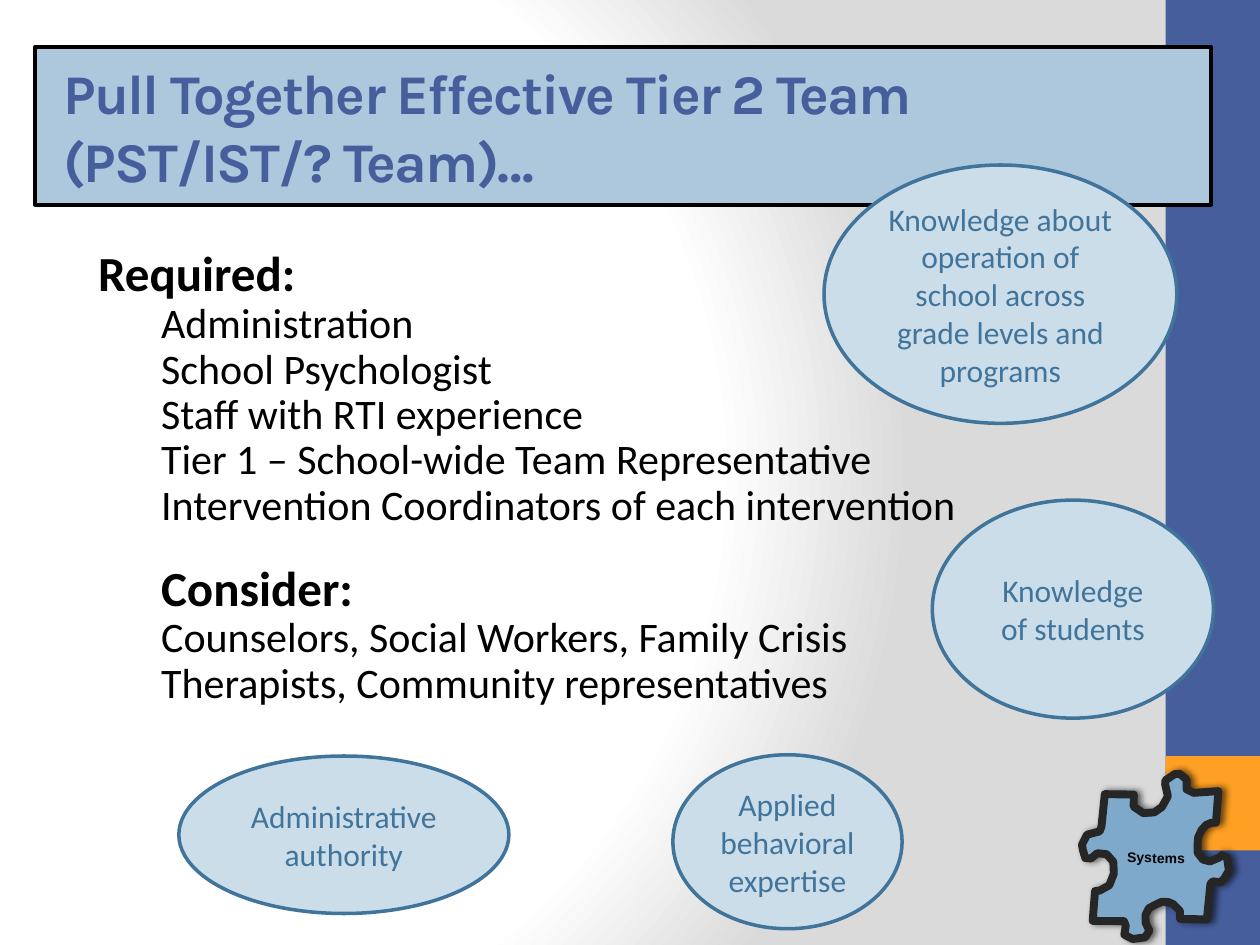
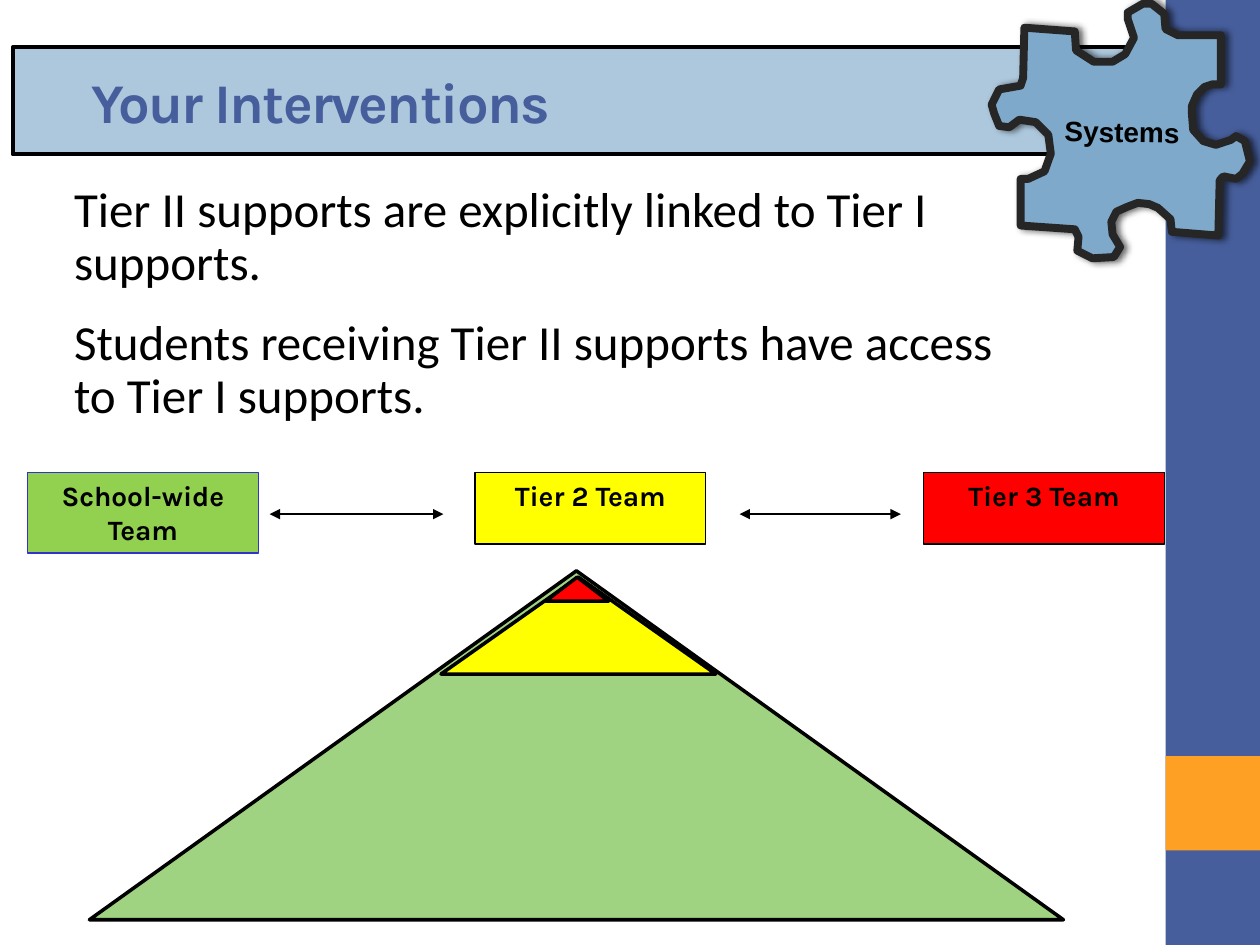
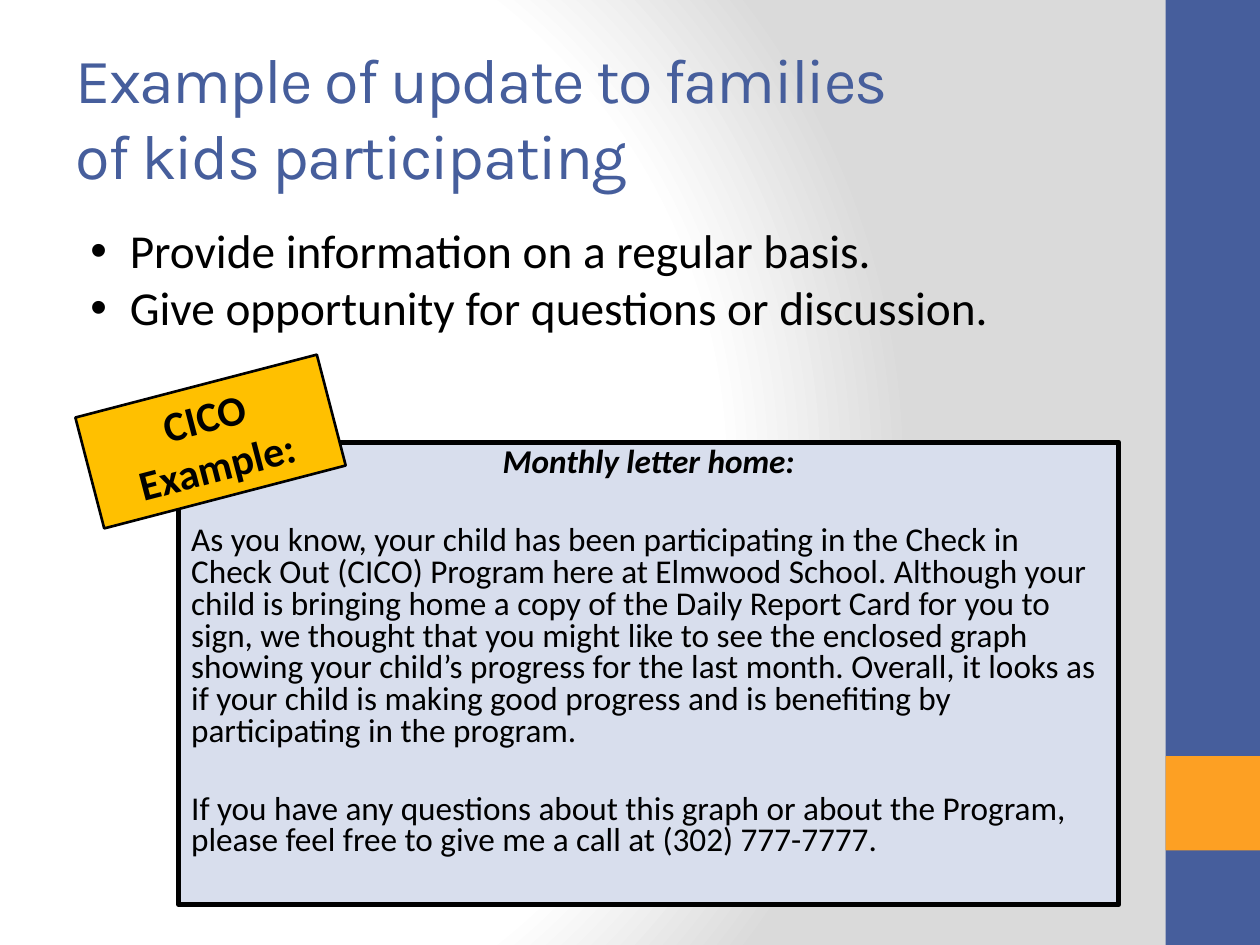
from lxml.etree import SubElement as Sub
from pptx import Presentation as Deck
from pptx.dml.color import RGBColor as RGB
from pptx.enum.shapes import MSO_CONNECTOR as Link, MSO_SHAPE as Form
from pptx.enum.text import MSO_ANCHOR as Anchor, PP_ALIGN as Align
from pptx.oxml.ns import qn
from pptx.util import Pt

HUES = {
    "band": "465E9C", "accent": "FDA023", "banner": "ADC8DD", "piece": "7EA9CA",
    "edge": "262626", "oval": "CCDDEA", "ring": "40749B", "letter": "D8DEED",
    "black": "000000", "white": "FFFFFF", "gray": "DADADA", "base": "A0D381",
    "green": "92D050", "blue": "3333CC", "yellow": "FFFF00", "red": "FF0000",
    "tag": "FFC000",
}

PIECE = [
    (969, 28), (969, 67), (962, 67), (956, 69), (950, 75), (946, 84), (946, 91),
    (947, 103), (955, 112), (965, 115), (977, 111), (981, 108), (988, 112),
    (992, 128), (986, 138), (981, 142), (971, 140), (968, 143), (967, 183),
    (967, 187), (930, 184), (929, 174), (919, 165), (912, 162), (903, 161),
    (895, 164), (886, 168), (882, 176), (883, 186), (889, 196), (884, 204),
    (867, 205), (855, 199), (856, 188), (853, 182), (810, 179), (810, 142),
    (816, 142), (829, 136), (834, 122), (832, 107), (822, 97), (809, 95),
    (801, 101), (793, 100), (789, 90), (787, 83), (793, 71), (810, 68),
    (812, 62), (813, 22), (853, 25), (854, 40), (868, 49), (883, 49), (893, 43),
    (900, 30), (895, 15), (895, 10), (907, 3), (914, 3), (924, 11), (925, 23),
    (935, 28),
]


def tint(name):
    return RGB.from_string(HUES[name])


def node(parent, tag, **attrs):
    return Sub(parent, qn(tag), {key: str(val) for key, val in attrs.items()})


def shade(page):
    fill = page.background.fill
    fill.solid()
    old = page._element.find(".//" + qn("p:bgPr")).find(qn("a:solidFill"))
    grad = node(old.getparent(), "a:gradFill", rotWithShape=1)
    old.getparent().replace(old, grad)
    stops = node(grad, "a:gsLst")
    for pos, name in ((0, "white"), (75, "white"), (100, "gray")):
        node(node(stops, "a:gs", pos=pos * 1000), "a:srgbClr", val=HUES[name])
    ramp = node(grad, "a:path", path="circle")
    node(ramp, "a:fillToRect", l=20000, t=50000, r=100000, b=50000)


def write(frame, text, size=18, font="Calibri", hue="black", bold=False, slant=False,
          align=Align.LEFT, lines=1, before=0, indent=0, hang=0, bullet=None, track=0):
    para = frame.add_paragraph() if frame.text else frame.paragraphs[0]
    para.text = text
    para.alignment, para.line_spacing, para.space_before = align, lines, Pt(before)
    props = para._p.get_or_add_pPr()
    props.set("marL", str(Pt(indent)))
    props.set("indent", str(Pt(-hang)))
    if bullet:
        node(props, "a:buFont", typeface="Arial")
        node(props, "a:buChar", char=bullet)
    for run in para.runs:
        face = run.font
        face.name, face.size, face.bold, face.italic = font, Pt(size), bold, slant
        face.color.rgb = tint(hue)
        if track:
            run._r.get_or_add_rPr().set("spc", str(track * 100))


class Maker:
    head = dict(size=32, font="Karla", hue="band", bold=True, track=-1)

    def __init__(self):
        self.deck = Deck()
        self.deck.slide_width, self.deck.slide_height = Pt(720), Pt(540)
        shade(self.deck.slide_master)

    def page(self):
        self.slide = self.deck.slides.add_slide(self.deck.slide_layouts[6])
        self.shape((666, 0, 54, 540), "band")
        self.shape((666, 432, 54, 54), "accent")

    def paint(self, item, fill, line, width):
        item.shadow.inherit = False
        item.fill.solid()
        item.fill.fore_color.rgb = tint(fill)
        if line:
            item.line.color.rgb = tint(line)
            item.line.width = Pt(width)
        else:
            item.line.fill.background()

    def shape(self, box, fill, line=None, width=1, form=Form.RECTANGLE,
              anchor=Anchor.TOP, turn=0):
        item = self.slide.shapes.add_shape(form, *map(Pt, box))
        self.paint(item, fill, line, width)
        item.rotation = turn
        frame = item.text_frame
        frame.word_wrap, frame.vertical_anchor = True, anchor
        return frame

    def text(self, box, anchor=Anchor.TOP, turn=0, wrap=True):
        item = self.slide.shapes.add_textbox(*map(Pt, box))
        item.rotation = turn
        frame = item.text_frame
        frame.word_wrap, frame.vertical_anchor = wrap, anchor
        return frame

    def banner(self, box, rows, indent):
        frame = self.shape(box, "banner", "black", 2.25, anchor=Anchor.MIDDLE)
        for row in rows:
            write(frame, row, indent=indent, **self.head)

    def oval(self, box, words):
        frame = self.shape(box, "oval", "ring", 2, Form.OVAL, Anchor.MIDDLE)
        write(frame, words, hue="ring", align=Align.CENTER)

    def team(self, box, words, fill, line="black"):
        frame = self.shape(box, fill, line, 0.75)
        write(frame, words, size=16, font="Karla", bold=True, align=Align.CENTER)

    def peak(self, box, fill):
        self.shape(box, fill, "black", 2, Form.ISOSCELES_TRIANGLE)

    def arrow(self, left, right, top):
        line = self.slide.shapes.add_connector(
            Link.STRAIGHT, Pt(left), Pt(top), Pt(right), Pt(top))
        line.line.color.rgb = tint("black")
        line.line.width = Pt(0.75)
        for end in ("a:headEnd", "a:tailEnd"):
            node(line.line._get_or_add_ln(), end, type="triangle")
        node(line._element.spPr, "a:effectLst")

    def puzzle(self, box, size, skew=(1, 0, 0, 1), shift=(0, 0)):
        a, b, c, d = skew
        dots = [(Pt(0.72 * (a * x + b * y) + shift[0]),
                 Pt(0.72 * (c * x + d * y) + shift[1])) for x, y in PIECE]
        path = self.slide.shapes.build_freeform(*dots[0], scale=1.0)
        path.add_line_segments(dots[1:], close=True)
        item = path.convert_to_shape()
        self.paint(item, "piece", "edge", 4.5)
        glow = node(item._element.spPr.find(qn("a:effectLst")), "a:outerShdw",
                    blurRad=Pt(4), dist=Pt(2), dir=0, rotWithShape=0)
        node(node(glow, "a:srgbClr", val=HUES["black"]), "a:alpha", val=60000)
        write(self.text(box, turn=0.8, wrap=False), "Systems", size=size,
              font="Arial", bold=True, align=Align.CENTER)


def roster(make):
    make.page()
    make.banner((20, 27, 672, 90),
                ("Pull Together Effective Tier 2 Team", "(PST/IST/? Team)…"), 9)
    make.puzzle((636.5, 481.7, 48.2, 17.3), 8, (0.58, -0.05, -0.04, 0.64), (292.6, 467.1))
    body = make.text((49, 139, 551, 271))
    write(body, "Required:", size=28, bold=True, lines=0.9)
    for row in ("Administration", "School Psychologist", "Staff with RTI experience",
                "Tier 1 – School-wide Team Representative",
                "Intervention Coordinators of each intervention"):
        write(body, row, size=24, lines=0.9, indent=36)
    write(body, "Consider:", size=28, bold=True, lines=0.9, indent=36, before=19.8)
    write(body, "Counselors, Social Workers, Family Crisis Therapists, "
          "Community representatives", size=24, lines=0.9, indent=36)
    for box, words in (
            ((384.5, 431.3, 131, 99.4), "Applied behavioral expertise"),
            ((532.8, 285.8, 160.6, 124.6), "Knowledge of students"),
            ((470.9, 94.3, 201.6, 147.6),
             "Knowledge about operation of school across grade levels and programs"),
            ((102.2, 432, 188.6, 90), "Administrative authority")):
        make.oval(box, words)


def tiers(make):
    make.page()
    back = make.slide.background.fill
    back.solid()
    back.fore_color.rgb = tint("white")
    make.banner((7.2, 27, 672, 61.2), ("Your Interventions",), 38)
    make.puzzle((597.6, 61.9, 87.1, 26.6), 16)
    body = make.text((35.3, 102.2, 551.5, 144.7))
    write(body, "Tier II supports are explicitly linked to Tier I supports.",
          size=28, lines=0.9)
    write(body, "Students receiving Tier II supports have access to Tier I supports.",
          size=28, lines=0.9, before=15.4)
    make.team((15.8, 270, 131.8, 46.1), "School-wide\nTeam", "green", "blue")
    make.team((271.4, 270, 131.8, 41), "Tier 2 Team", "yellow")
    make.team((527.8, 270, 137.5, 41), "Tier 3 Team", "red")
    make.arrow(154.1, 253.4, 293.8)
    make.arrow(422.6, 514.8, 293.8)
    make.peak((51.1, 326.2, 556.6, 199.4), "base")
    make.peak((252, 329.8, 157, 55.4), "yellow")
    make.peak((311.8, 329.8, 36, 13.7), "red")


def update(make):
    make.page()
    title = make.text((36, 21.6, 600, 90), Anchor.MIDDLE)
    write(title, "Example of update to families\nof kids participating",
          **{**make.head, "size": 36, "bold": False})
    note = make.shape((102.2, 252.7, 537.1, 264.2), "letter", "black", 3)
    write(note, "Monthly letter home:", size=19, bold=True, slant=True,
          align=Align.CENTER, lines=0.8)
    for words in (
            "As you know, your child has been participating in the Check in Check Out "
            "(CICO) Program here at Elmwood School. Although your child is bringing home "
            "a copy of the Daily Report Card for you to sign, we thought that you might "
            "like to see the enclosed graph showing your child’s progress for the last "
            "month. Overall, it looks as if your child is making good progress and is "
            "benefiting by participating in the program.",
            "If you have any questions about this graph or about the Program, please "
            "feel free to give me a call at (302) 777-7777."):
        write(note, words, size=19, lines=0.8, before=26)
    points = make.text((44.6, 123.1, 627.8, 72.7))
    for row in ("Provide information on a regular basis.",
                "Give opportunity for questions or discussion."):
        write(points, row, size=27, indent=22.5, hang=22.5, bullet="•")
    tag = make.shape((49, 219.6, 142.6, 65.5), "tag", "black", 1.5, turn=345.4)
    write(tag, "CICO Example:", size=24, bold=True, align=Align.CENTER)


def main():
    make = Maker()
    for build in (roster, tiers, update):
        build(make)
    make.deck.save("out.pptx")


if __name__ == "__main__":
    main()
